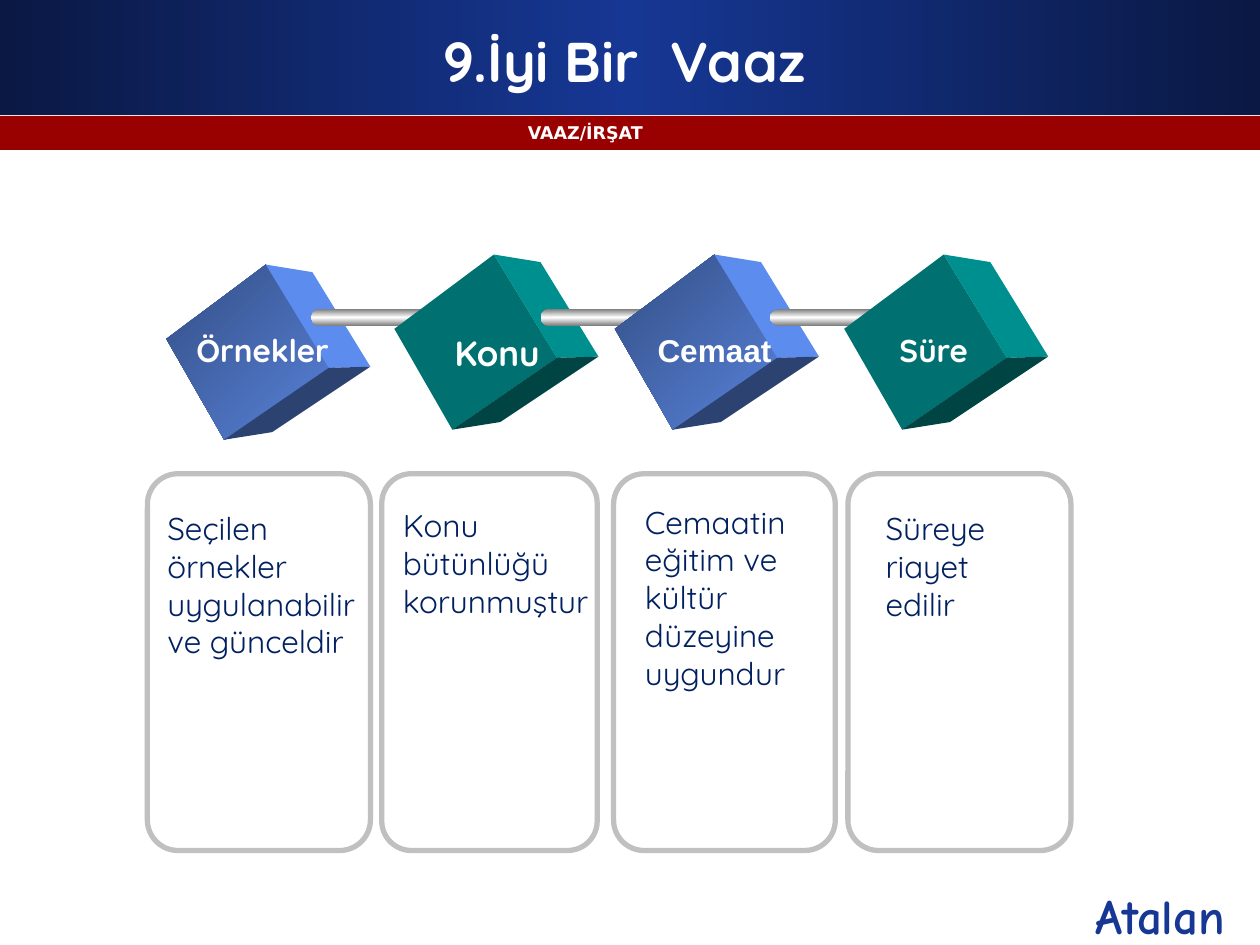
from copy import deepcopy

from pptx import Presentation
from pptx.dml.color import RGBColor
from pptx.enum.shapes import MSO_SHAPE
from pptx.enum.text import MSO_ANCHOR, PP_ALIGN
from pptx.util import Inches, Pt

RECT, ROUNDED, OVAL = MSO_SHAPE.RECTANGLE, MSO_SHAPE.ROUNDED_RECTANGLE, MSO_SHAPE.OVAL
LEFT, CENTER, RIGHT = PP_ALIGN.LEFT, PP_ALIGN.CENTER, PP_ALIGN.RIGHT
TOP, MIDDLE = MSO_ANCHOR.TOP, MSO_ANCHOR.MIDDLE

COLORS = {
    "navy": "0A1843", "blue": "163794", "red": "990000", "white": "FFFFFF",
    "frame": "C0C0C0", "body": "002060", "steel": "767676",
    "blue_dark": "344E84", "blue_light": "5782DA",
    "blue_side": "5C8DEE", "blue_base": "2C4270",
    "teal": "007070", "teal_side": "008F8F", "teal_base": "004444",
}

# Cube corners, measured from the cube's upper-left limit
WEST, NORTH, NORTH_EAST, EAST = (0, 0.59), (0.79, 0), (1.16, 0.06), (1.62, 0.81)
INNER, SOUTH_EAST, SOUTH = (1.29, 0.82), (0.84, 1.33), (0.46, 1.39)
FACES = [
    (WEST, NORTH, INNER, SOUTH),
    (NORTH, NORTH_EAST, EAST, INNER),
    (INNER, EAST, SOUTH_EAST, SOUTH),
]
BLUE_CUBE = [["blue_dark", "blue_light"], ["blue_side"], ["blue_base"]]
TEAL_CUBE = [["teal"], ["teal_side"], ["teal_base"]]


class SlideBuilder:
    """Holds the style and the current slide."""

    font = "Quicksand"

    def __init__(self, page):
        self.shapes = page.shapes

    def color(self, name):
        return RGBColor.from_string(COLORS[name])

    def paint(self, shape, names, angle=0):
        """Fill with one colour, or with a gradient of two or three."""
        shape.shadow.inherit = False
        shape.line.fill.background()
        if len(names) == 1:
            shape.fill.solid()
            shape.fill.fore_color.rgb = self.color(names[0])
            return
        shape.fill.gradient()
        shape.fill.gradient_angle = angle
        if len(names) == 3:
            first = shape._element.spPr.gradFill.gsLst[0]
            first.addnext(deepcopy(first))
        for index, (stop, name) in enumerate(zip(shape.fill.gradient_stops, names)):
            stop.position = index / (len(names) - 1)
            stop.color.rgb = self.color(name)

    def block(self, kind, left, top, width, height, names, angle=0):
        shape = self.shapes.add_shape(
            kind, Inches(left), Inches(top), Inches(width), Inches(height))
        self.paint(shape, names, angle)

    def frame(self, left, top, width, height):
        shape = self.shapes.add_shape(
            ROUNDED, Inches(left), Inches(top), Inches(width), Inches(height))
        shape.adjustments[0] = 0.137
        shape.shadow.inherit = False
        shape.fill.background()
        shape.line.color.rgb = self.color("frame")
        shape.line.width = Pt(3)

    def cube(self, left, top, looks):
        for corners, names in zip(FACES, looks):
            points = [(Inches(left + x), Inches(top + y)) for x, y in corners]
            outline = self.shapes.build_freeform(*points[0])
            outline.add_line_segments(points[1:], close=True)
            self.paint(outline.convert_to_shape(), names, 315)

    def rod(self, left, cap, length):
        metal = ["steel", "white", "steel"]
        self.block(OVAL, left, 2.45, cap, 0.14, metal, 90)
        self.block(RECT, left + cap / 2, 2.45, length, 0.14, metal, 90)

    def text(self, words, left, top, width, height, size, color="white",
             font=None, bold=True, align=LEFT, anchor=TOP, wrap=True):
        box = self.shapes.add_textbox(
            Inches(left), Inches(top), Inches(width), Inches(height))
        frame = box.text_frame
        frame.word_wrap = wrap
        frame.vertical_anchor = anchor
        para = frame.paragraphs[0]
        para.text = words
        para.alignment = align
        para.font.name = font or self.font
        para.font.size = Pt(size)
        para.font.bold = bold
        para.font.color.rgb = self.color(color)


def main():
    deck = Presentation()
    deck.slide_width, deck.slide_height = Inches(10), Inches(7.5)
    slide = SlideBuilder(deck.slides.add_slide(deck.slide_layouts[6]))

    # Header bands, title and footer name
    slide.block(RECT, 0, 0, 10, 0.91, ["navy", "blue", "navy"])
    slide.block(RECT, 0, 0.92, 10, 0.27, ["red"])
    slide.text("Atalan", 6.65, 6.98, 3.17, 0.35, 28, "blue", "Comic Neue", align=RIGHT)
    slide.text("VAAZ/İRŞAT", 0.02, 0.92, 9.25, 0.25, 10, font="DejaVu Sans", align=CENTER)
    slide.text("9.İyi Bir  Vaaz", 0.33, 0.17, 9.25, 0.62, 32, align=CENTER, anchor=MIDDLE)

    # Frames under the cubes
    for left, width in [(1.17, 1.77), (3.03, 1.71), (4.87, 1.76), (6.73, 1.77)]:
        slide.frame(left, 3.76, width, 2.99)

    # Chain of cubes, each rod running behind the next cube
    slide.cube(1.32, 2.1, BLUE_CUBE)
    slide.rod(2.47, 0.17, 0.82)
    slide.cube(3.13, 2.02, TEAL_CUBE)
    slide.rod(4.29, 0.17, 0.82)
    slide.cube(4.88, 2.02, BLUE_CUBE)
    slide.rod(6.11, 0.22, 1.07)
    slide.cube(6.7, 2.02, TEAL_CUBE)

    # Cube labels
    for words, left, width, size, font in [
        ("Örnekler", 1.46, 1.29, 18, "Quicksand"),
        ("Konu", 3.51, 0.9, 20, "Quicksand"),
        ("Cemaat", 5.12, 1.11, 18, "Arial"),
        ("Süre", 7.04, 0.79, 18, "Quicksand"),
    ]:
        slide.text(words, left, 2.58, width, 0.4, size, font=font, wrap=False)

    # Descriptions
    for words, left, top, width, height in [
        ("Seçilen örnekler uygulanabilir ve günceldir", 1.23, 3.99, 1.87, 1.31),
        ("Konu bütünlüğü korunmuştur", 3.1, 3.97, 1.77, 1.01),
        ("Cemaatin eğitim ve kültür düzeyine uygundur", 5.02, 3.94, 1.69, 1.92),
        ("Süreye riayet edilir", 6.93, 3.99, 1.28, 1.01),
    ]:
        slide.text(words, left, top, width, height, 18, "body", bold=False)

    deck.save("out.pptx")


if __name__ == "__main__":
    main()
